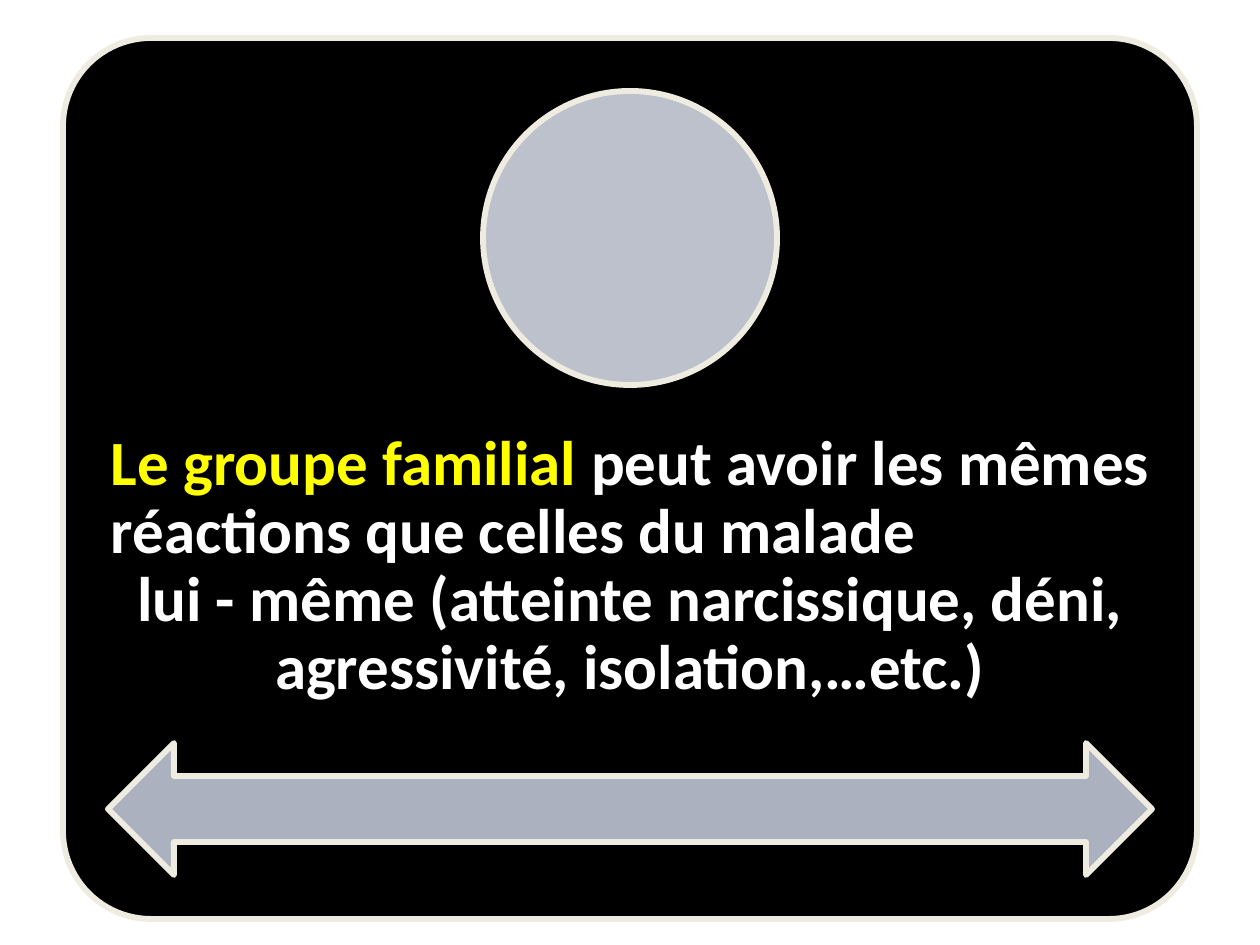
"""Build a slide on how the family group reacts to illness."""
from dataclasses import dataclass

from pptx import Presentation
from pptx import util as u
from pptx.dml.color import RGBColor
from pptx.enum import shapes, text

PX = 914400 / 126
SLIDE_WIDTH, SLIDE_HEIGHT = 1260, 945
INSET = 35
BLACK = RGBColor(0x00, 0x00, 0x00)
WHITE = RGBColor(0xFF, 0xFF, 0xFF)
YELLOW = RGBColor(0xFF, 0xFF, 0x00)
CREAM = RGBColor(0xEE, 0xEC, 0xE1)
PALE_GREY = RGBColor(0xBD, 0xC1, 0xCC)
BLUE_GREY = RGBColor(0xAC, 0xB1, 0xBF)


@dataclass(frozen=True)
class Figure:
    kind: shapes.MSO_SHAPE
    top: int
    width: int
    height: int
    fill: RGBColor


@dataclass(frozen=True)
class Passage:
    align: text.PP_ALIGN
    indent: int
    runs: tuple[tuple[str, RGBColor], ...]


PANEL = Figure(shapes.MSO_SHAPE.ROUNDED_RECTANGLE, 38, 1134, 881, BLACK)
CIRCLE = Figure(shapes.MSO_SHAPE.OVAL, 91, 294, 294, PALE_GREY)
ARROW = Figure(shapes.MSO_SHAPE.LEFT_RIGHT_ARROW, 743, 1044, 132, BLUE_GREY)

PASSAGES = (
    Passage(text.PP_ALIGN.LEFT, 13, (
        ("Le groupe familial", YELLOW),
        (" peut avoir les mêmes réactions que celles du malade", WHITE),
    )),
    Passage(text.PP_ALIGN.CENTER, 0, (
        ("lui - même (atteinte narcissique, déni, "
         "agressivité, isolation,…etc.)", WHITE),
    )),
)


def px(length: int) -> u.Emu:
    """Turn pixels into EMU."""
    return u.Emu(round(length * PX))


def centred_left(width: int) -> u.Emu:
    """Return the left edge that centres a width on the slide."""
    return px((SLIDE_WIDTH - width) // 2)


def draw_figure(slide, figure: Figure):
    """Draw an outlined shape centred across the slide."""
    shape = slide.shapes.add_shape(
        figure.kind, centred_left(figure.width), px(figure.top),
        px(figure.width), px(figure.height))
    shape.shadow.inherit = False
    shape.fill.solid()
    shape.fill.fore_color.rgb = figure.fill
    shape.line.color.rgb = CREAM
    shape.line.width = u.Pt(3.35)
    return shape


def write_message(slide, top: int, width: int, height: int) -> None:
    """Write the passages in a box centred across the slide."""
    message = slide.shapes.add_textbox(
        centred_left(width), px(top), px(width), px(height)).text_frame
    message.word_wrap = True
    message.vertical_anchor = text.MSO_ANCHOR.MIDDLE
    message.margin_left = message.margin_right = px(INSET)
    message.margin_top = message.margin_bottom = px(INSET)
    for index, passage in enumerate(PASSAGES):
        paragraph = message.add_paragraph() if index else message.paragraphs[0]
        paragraph.alignment = passage.align
        paragraph.line_spacing = 0.9
        if passage.indent:
            paragraph._p.get_or_add_pPr().set("marL", str(px(passage.indent)))
        for words, color in passage.runs:
            run = paragraph.add_run()
            run.text = words
            run.font.name = "Calibri"
            run.font.size = u.Pt(36)
            run.font.bold = True
            run.font.color.rgb = color


def main() -> None:
    """Build and save the slide."""
    deck = Presentation()
    deck.slide_width, deck.slide_height = px(SLIDE_WIDTH), px(SLIDE_HEIGHT)
    slide = deck.slides.add_slide(deck.slide_layouts[6])
    draw_figure(slide, PANEL).adjustments[0] = 0.1
    write_message(slide, top=391, width=PANEL.width, height=353)
    for figure in (CIRCLE, ARROW):
        draw_figure(slide, figure)
    deck.save("out.pptx")


if __name__ == "__main__":
    main()
